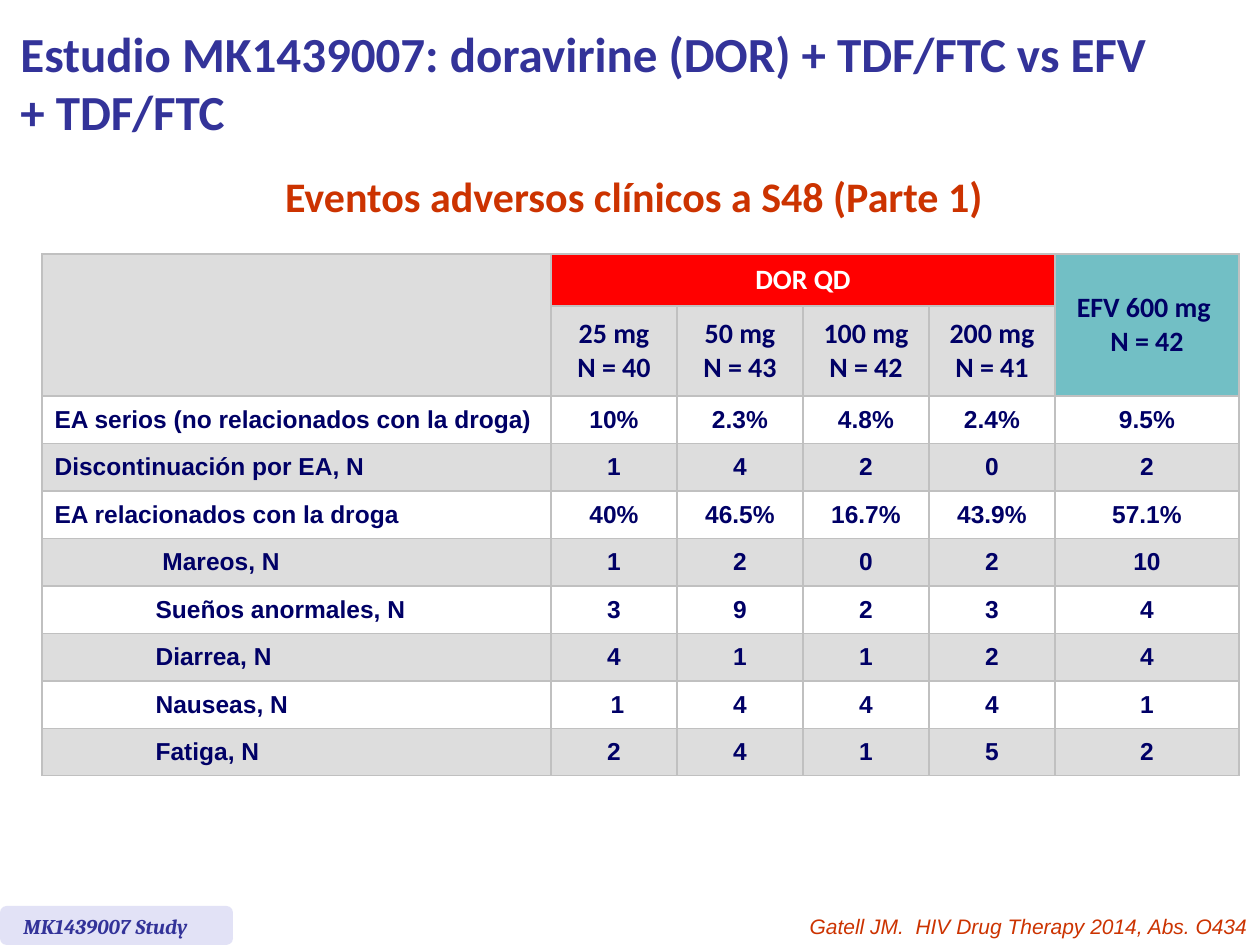
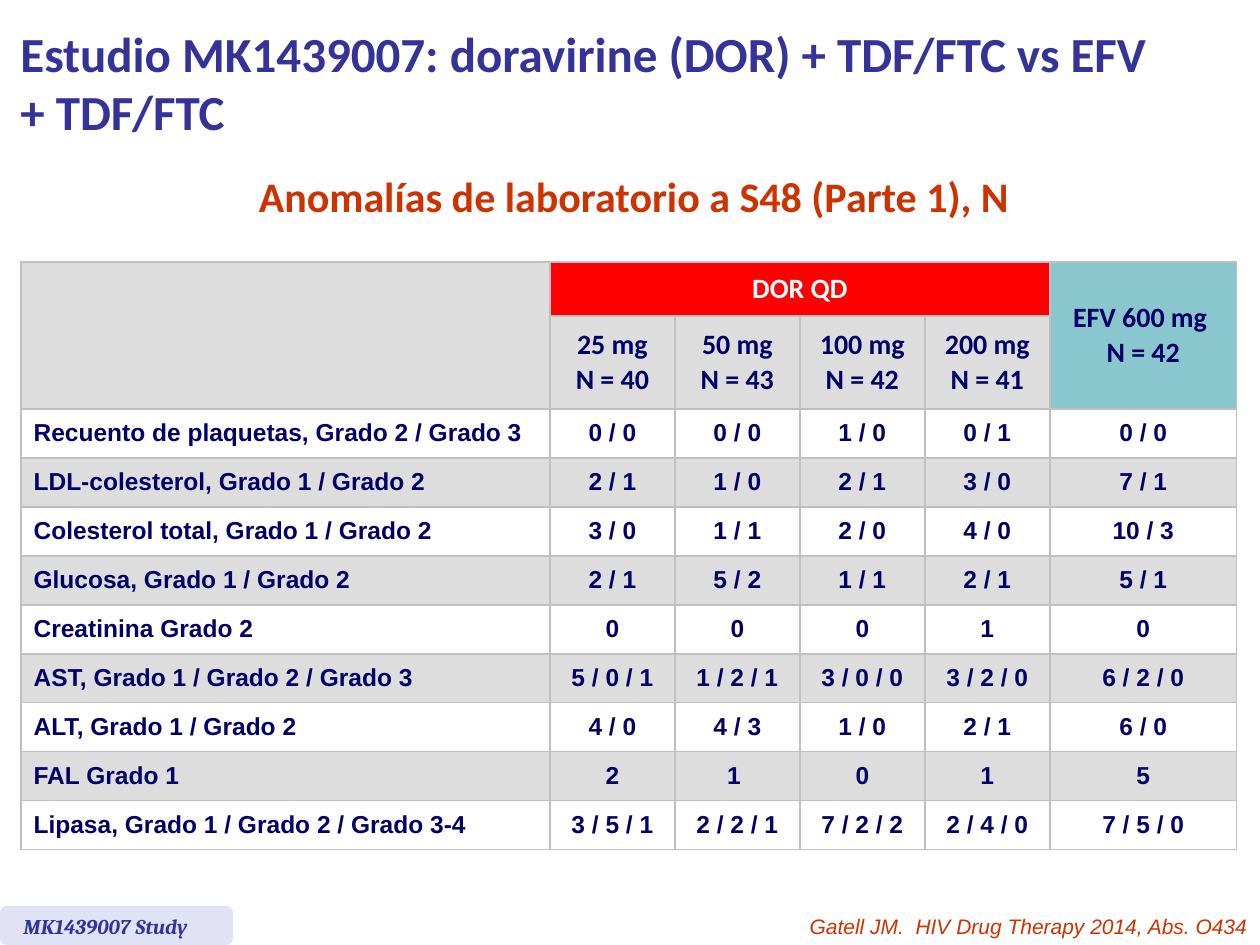
from pptx import Presentation
from pptx.dml.color import RGBColor
from pptx.enum.shapes import MSO_SHAPE
from pptx.enum.text import MSO_ANCHOR, PP_ALIGN as AL
from pptx.util import Pt
from lxml import etree

NAVY = RGBColor(0x00, 0x00, 0x66)
INDIGO = RGBColor(0x33, 0x33, 0x99)
RUST = RGBColor(0xCC, 0x33, 0x00)
RED = RGBColor(0xFF, 0x00, 0x00)
WHITE = RGBColor(0xFF, 0xFF, 0xFF)
GREY = RGBColor(0xDD, 0xDD, 0xDD)
LILAC = RGBColor(0xE2, 0xE2, 0xF6)
TEAL = RGBColor(0x72, 0xBF, 0xC5)
AQUA = RGBColor(0x8A, 0xC6, 0xCD)
EDGE = RGBColor(0xC0, 0xC0, 0xC0)

TITLE = ["Estudio MK1439007: doravirine (DOR) + TDF/FTC vs EFV", "+ TDF/FTC"]
STUDY = "MK1439007 Study"
SOURCE = "Gatell JM.  HIV Drug Therapy 2014, Abs. O434"
GROUP = "DOR QD"
DOSES = [["25 mg", "N = 40"], ["50 mg", "N = 43"],
         ["100 mg", "N = 42"], ["200 mg", "N = 41"]]
CONTROL = ["EFV 600 mg ", "N = 42"]

# "sub" is the number of last rows whose label is indented by one column
SLIDES = [
    {"head": "Eventos adversos clínicos a S48 (Parte 1)",
     "at": (42, 254), "labels": [101, 408], "dose": 126, "control": 184,
     "heads": [52, 90], "body": 380, "tint": TEAL, "sub": 5,
     "rows": [
         ("EA serios (no relacionados con la droga)",
          "10%", "2.3%", "4.8%", "2.4%", "9.5%"),
         ("Discontinuación por EA, N", "1", "4", "2", "0", "2"),
         ("EA relacionados con la droga",
          "40%", "46.5%", "16.7%", "43.9%", "57.1%"),
         (" Mareos, N", "1", "2", "0", "2", "10"),
         ("Sueños anormales, N", "3", "9", "2", "3", "4"),
         ("Diarrea, N", "4", "1", "1", "2", "4"),
         ("Nauseas, N", " 1", "4", "4", "4", "1"),
         ("Fatiga, N", "2", "4", "1", "5", "2")]},
    {"head": "Anomalías de laboratorio a S48 (Parte 1), N",
     "at": (21, 262), "labels": [529], "dose": 125, "control": 187,
     "heads": [54, 93], "body": 441, "tint": AQUA, "sub": 0,
     "rows": [
         ("Recuento de plaquetas, Grado 2 / Grado 3",
          "0 / 0", "0 / 0", "1 / 0", "0 / 1", "0 / 0"),
         ("LDL-colesterol, Grado 1 / Grado 2",
          "2 / 1", "1 / 0", "2 / 1", "3 / 0", "7 / 1"),
         ("Colesterol total, Grado 1 / Grado 2",
          "3 / 0", "1 / 1", "2 / 0", "4 / 0", "10 / 3"),
         ("Glucosa, Grado 1 / Grado 2",
          "2 / 1", "5 / 2", "1 / 1", "2 / 1", "5 / 1"),
         ("Creatinina Grado 2", "0", "0", "0", "1", "0"),
         ("AST, Grado 1 / Grado 2 / Grado 3",
          "5 / 0 / 1", "1 / 2 / 1", "3 / 0 / 0", "3 / 2 / 0", "6 / 2 / 0"),
         ("ALT, Grado 1 / Grado 2",
          "4 / 0", "4 / 3", "1 / 0", "2 / 1", "6 / 0"),
         ("FAL Grado 1", "2", "1 ", "0", "1", "5"),
         ("Lipasa, Grado 1 / Grado 2 / Grado 3-4",
          "3 / 5 / 1", "2 / 2 / 1", "7 / 2 / 2", "2 / 4 / 0", "7 / 5 / 0")]},
]


def px(n):
    return round(n * 914400 / 126)


def add_run(para, text, face, size, color, bold=True, italic=False):
    run = para.add_run()
    run.text = text
    font = run.font
    font.name, font.size, font.bold, font.italic = face, Pt(size), bold, italic
    font.color.rgb = color


def add_text(slide, box, lines, *style, align=AL.LEFT, wrap=True,
             anchor=MSO_ANCHOR.TOP):
    frame = slide.shapes.add_textbox(*map(px, box)).text_frame
    frame.word_wrap, frame.vertical_anchor = wrap, anchor
    para = frame.paragraphs[0]
    para.alignment = align
    for i, line in enumerate(lines):
        if i:
            para.add_line_break()
        add_run(para, line, *style)


def add_edges(cell, sides):
    """Draw the cell's borders; they must stand before its fill."""
    props = cell._tc.get_or_add_tcPr()
    for i, side in enumerate("LRTB"):
        xml = ('<a:ln{0} xmlns:a="http://schemas.openxmlformats.org/drawingml/'
               '2006/main" w="12700">{1}</a:ln{0}>')
        paint = (f'<a:solidFill><a:srgbClr val="{EDGE}"/></a:solidFill>'
                 if side in sides else "<a:noFill/>")
        props.insert(i, etree.fromstring(xml.format(side, paint)))


def fill_cell(cell, lines=(), face="Arial", size=14, color=NAVY, fill=None,
              align=AL.CENTER, sides="LRTB"):
    cell.vertical_anchor = MSO_ANCHOR.MIDDLE
    if fill is None:
        cell.fill.background()
    else:
        cell.fill.solid()
        cell.fill.fore_color.rgb = fill
    add_edges(cell, sides)
    frame = cell.text_frame
    for i, line in enumerate(lines):
        para = frame.add_paragraph() if i else frame.paragraphs[0]
        para.alignment = align
        add_run(para, line, face, size, color)
    if not lines:
        end = frame.paragraphs[0]._p.get_or_add_endParaRPr()
        end.set("sz", str(size * 100))


def add_grid(slide, data):
    rows, heads = data["rows"], data["heads"]
    wide = data["labels"] + [data["dose"]] * len(DOSES) + [data["control"]]
    tall = heads + [data["body"] / len(rows)] * len(rows)
    box = (*data["at"], sum(wide), sum(tall))
    table = slide.shapes.add_table(len(tall), len(wide), *map(px, box)).table
    table.first_row = table.horz_banding = False
    for col, w in zip(table.columns, wide):
        col.width = px(w)
    for row, h in zip(table.rows, tall):
        row.height = px(h)

    first, last = len(data["labels"]), len(wide) - 1
    cells = {(0, 0): ([], {"fill": GREY}),
             (0, first): ([GROUP], {"fill": RED, "color": WHITE}),
             (0, last): (CONTROL, {"fill": data["tint"]})}
    for c, dose in enumerate(DOSES, first):
        cells[1, c] = dose, {"fill": GREY}
    for spot in cells:
        cells[spot][1].update(face="Calibri", size=16)
    table.cell(0, 0).merge(table.cell(1, first - 1))
    table.cell(0, first).merge(table.cell(0, last - 1))
    table.cell(0, last).merge(table.cell(1, last))

    for i, (label, *values) in enumerate(rows):
        r, fill = i + len(heads), GREY if i % 2 else None
        name = {"fill": fill, "align": AL.LEFT}
        if i >= len(rows) - data["sub"]:
            cells[r, 0] = [], {"fill": fill, "sides": "LTB"}
            cells[r, first - 1] = [label], {**name, "sides": "RTB"}
        else:
            cells[r, 0] = [label], name
            if first > 1:
                table.cell(r, 0).merge(table.cell(r, first - 1))
        for c, value in enumerate(values, first):
            cells[r, c] = [value], {"fill": fill}

    for r in range(len(tall)):
        for c in range(len(wide)):
            lines, look = cells.get((r, c), ([], {}))
            fill_cell(table.cell(r, c), lines, **look)


def add_frame(slide, head):
    """Add the title, subtitle and footer that both slides share."""
    add_text(slide, (8, 6, 1244, 152), TITLE, "Calibri", 28, INDIGO,
             anchor=MSO_ANCHOR.MIDDLE)
    add_text(slide, (243, 164, 782, 63), [head], "Calibri", 24, RUST,
             align=AL.CENTER, wrap=False)
    tab = slide.shapes.add_shape(MSO_SHAPE.ROUNDED_RECTANGLE,
                                 *map(px, (0, 906, 233, 39)))
    tab.shadow.inherit = False
    tab.fill.solid()
    tab.fill.fore_color.rgb = LILAC
    tab.line.fill.background()
    add_text(slide, (11, 907, 222, 38), [STUDY], "Cambria", 12, INDIGO,
             True, True)
    add_text(slide, (735, 907, 525, 38), [SOURCE], "Arial", 12, RUST,
             False, True, align=AL.RIGHT)


def main():
    deck = Presentation()
    deck.slide_width, deck.slide_height = px(1260), px(945)
    for data in SLIDES:
        slide = deck.slides.add_slide(deck.slide_layouts[6])
        add_frame(slide, data["head"])
        add_grid(slide, data)
    deck.save("out.pptx")


if __name__ == "__main__":
    main()
